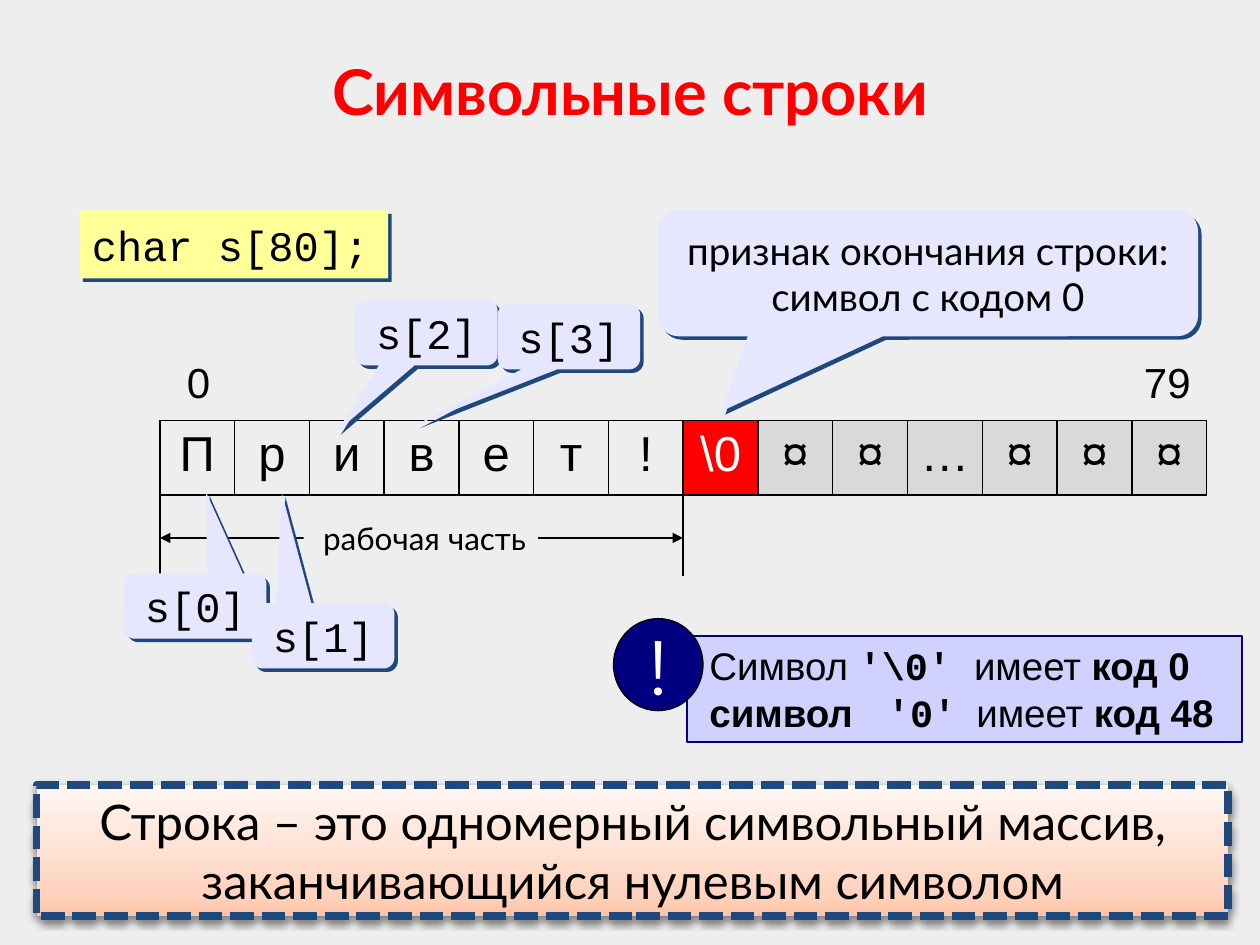
"""Build the slide on character strings in C."""
import copy

import lxml.etree
import pptx
import pptx.dml.color
import pptx.enum.dml
import pptx.enum.shapes
import pptx.enum.text
import pptx.oxml.ns
import pptx.util

Pt = pptx.util.Pt
hex_color = pptx.dml.color.RGBColor.from_string
qn = pptx.oxml.ns.qn
add_xml = lxml.etree.SubElement
SHAPE = pptx.enum.shapes.MSO_SHAPE
ANCHOR = pptx.enum.text.MSO_ANCHOR
ALIGN = pptx.enum.text.PP_ALIGN
STRAIGHT = pptx.enum.shapes.MSO_CONNECTOR.STRAIGHT
NO_STYLE = "{2D5ABB26-0587-4C30-8999-92F81FD0307C}"


def add_box(shapes, preset, place, fill, text, size, font, color="000000"):
    box = shapes.add_shape(preset, *map(Pt, place))
    box.shadow.inherit = False
    box.fill.solid()
    box.fill.fore_color.rgb = hex_color(fill)
    box.line.fill.background()
    box.text_frame.text = text
    para = box.text_frame.paragraphs[0]
    para.alignment = ALIGN.CENTER
    para.font.size = Pt(size)
    para.font.name = font
    para.font.color.rgb = hex_color(color)
    return box


def add_shadow(box, color, opacity, blur, distance, angle):
    effects = box._element.spPr.find(qn("a:effectLst"))
    shadow = add_xml(effects, qn("a:outerShdw"), blurRad=str(Pt(blur)), dist=str(Pt(distance)),
                     dir=str(angle * 60000), algn="ctr", rotWithShape="0")
    tint = add_xml(shadow, qn("a:srgbClr"), val=color)
    add_xml(tint, qn("a:alpha"), val=str(opacity * 1000))


deck = pptx.Presentation()
deck.slide_width, deck.slide_height = Pt(720), Pt(540)
slide = deck.slides.add_slide(deck.slide_layouts[5])
slide.background.fill.solid()
slide.background.fill.fore_color.rgb = hex_color("EEEEEE")

title = slide.shapes.title
title.left, title.top, title.width, title.height = Pt(36), Pt(26.6), Pt(648), Pt(98.6)
title.text_frame.text = "Символьные строки"
title.text_frame.vertical_anchor = ANCHOR.TOP
para = title.text_frame.paragraphs[0]
para.alignment = ALIGN.CENTER
para.font.name = "Lato"
para.font.size = Pt(36)
para.font.bold = True
para.font.color.rgb = hex_color("FF0000")

letters = ["П", "р", "и", "в", "е", "т", "!", "\\0", "¤", "¤", "…", "¤", "¤", "¤"]
tables = [
    (letters, 91.4, 240.4, 598.4, 42.6, 28, True),
    (["0"], 92.9, 202.3, 41, 36, 24, False),
    (["79"], 637.9, 202.3, 58.3, 36, 24, False),
]
for words, left, top, width, height, size, bordered in tables:
    frame = slide.shapes.add_table(1, len(words), Pt(left), Pt(top), Pt(width), Pt(height))
    table = frame.table
    table.first_row = table.horz_banding = False
    table._tbl.tblPr.find(qn("a:tableStyleId")).text = NO_STYLE
    for index, word in enumerate(words):
        cell = table.cell(0, index)
        cell.text = word
        para = cell.text_frame.paragraphs[0]
        para.alignment = ALIGN.CENTER
        para.font.size = Pt(size)
        para.font.name = "Arial"
        para.font.color.rgb = hex_color("FFFFFF" if word == "\\0" else "000000")
        if bordered:
            for side in ("a:lnL", "a:lnR", "a:lnT", "a:lnB"):
                border = add_xml(cell._tc.get_or_add_tcPr(), qn(side), w=str(Pt(1)))
                add_xml(add_xml(border, qn("a:solidFill")), qn("a:srgbClr"), val="000000")
        if index < 7:
            cell.fill.background()
        else:
            cell.fill.solid()
            cell.fill.fore_color.rgb = hex_color("FF0000" if index == 7 else "D9D9D9")

label = slide.shapes.add_textbox(Pt(173.5), Pt(293.3), Pt(138.2), Pt(28.3))
label.text_frame.word_wrap = False
label.text_frame.vertical_anchor = ANCHOR.MIDDLE
label.text_frame.text = "рабочая часть"
para = label.text_frame.paragraphs[0]
para.alignment = ALIGN.CENTER
para.font.size = Pt(18)
para.font.name = "Lato"
para.font.color.rgb = hex_color("000000")

lines = [
    (390.3, 275, 390.3, 329, False),
    (91.4, 274.3, 91.4, 328.3, False),
    (307.4, 307.4, 390.3, 307.4, True),
    (173.5, 307.4, 91.4, 307.4, True),
]
for *ends, arrow in lines:
    connector = slide.shapes.add_connector(STRAIGHT, *map(Pt, ends))
    connector.line.color.rgb = hex_color("000000")
    connector.line.width = Pt(1)
    properties = connector._element.spPr
    add_xml(properties, qn("a:effectLst"))
    if arrow:
        add_xml(properties.find(qn("a:ln")), qn("a:tailEnd"), type="triangle")
connector.begin_connect(label, 1)

callouts = [
    ("s[0]", (70.9, 327.6, 81.4, 37.4), (0.077, -1.733), 24, "Courier New"),
    ("s[1]", (144, 344.6, 81.4, 37.4), (-0.289, -2.173), 24, "Courier New"),
    ("s[2]", (203, 171.4, 81.4, 37.4), (-0.626, 1.507), 24, "Courier New"),
    ("s[3]", (284.4, 173.7, 81.4, 37.4), (-1.067, 1.343), 24, "Courier New"),
    ("признак окончания строки: символ с кодом 0", (375.8, 120.2, 308.9, 72),
     (-0.381, 1.094), 22, "Lato"),
]
for text, place, tip, size, font in callouts:
    callout = add_box(slide.shapes, SHAPE.ROUNDED_RECTANGULAR_CALLOUT, place, "E6E6FF",
                      text, size, font)
    callout.adjustments[0], callout.adjustments[1] = tip
    add_shadow(callout, "1F497D", 100, 0, 2.8, 45)

code = add_box(slide.shapes, SHAPE.RECTANGLE, (45.4, 120.2, 176.4, 38.9), "FFFF99",
               "char s[80];", 24, "Courier New")
code.text_frame.paragraphs[0].alignment = ALIGN.LEFT
add_shadow(code, "1F497D", 100, 0, 2.8, 45)

remark = slide.shapes.add_group_shape()
note = add_box(remark.shapes, SHAPE.RECTANGLE, (392.4, 363.6, 317.5, 60.5), "D1D1FF",
               "", 22, "Arial")
note.line.color.rgb = hex_color("000080")
note.line.width = Pt(1)
note.text_frame.vertical_anchor = ANCHOR.TOP
note.text_frame.margin_left = Pt(13)
note.text_frame.margin_right = 0
note.text_frame.add_paragraph()
note_rows = [
    [("Символ ", "Arial", False), ("'\\0' ", "Courier New", True),
     ("имеет ", "Arial", False), ("код 0", "Arial", True)],
    [("символ\t", "Arial", True), ("'0'\t", "Courier New", True),
     ("имеет ", "Arial", False), ("код 48", "Arial", True)],
]
for para, row in zip(note.text_frame.paragraphs, note_rows):
    para.alignment = ALIGN.LEFT
    stops = lxml.etree.Element(qn("a:tabLst"))
    for stop in (101.5, 152.5):
        add_xml(stops, qn("a:tab"), pos=str(Pt(stop)), algn="l")
    para._p.get_or_add_pPr().insert(0, stops)
    para.font.size = Pt(22)
    para.font.color.rgb = hex_color("000000")
    for text, font, bold in row:
        span = para.add_run()
        span.text = text
        span.font.name = font
        span.font.bold = bold

badge = add_box(remark.shapes, SHAPE.OVAL, (350.6, 353.5, 51.1, 52.6), "000080",
                "!", 44, "Montserrat", "FFFFFF")
badge.line.color.rgb = hex_color("000000")
badge.line.width = Pt(0.75)
badge.text_frame.word_wrap = False

summary = add_box(slide.shapes, SHAPE.RECTANGLE, (20.9, 448.6, 681.1, 74.9), "FFF7F3",
                  "Строка – это одномерный символьный массив, заканчивающийся нулевым символом",
                  28, "Lato")
summary.text_frame.vertical_anchor = ANCHOR.TOP
summary.fill.gradient()
summary.fill.gradient_angle = 90
stop_list = summary._element.spPr.find(qn("a:gradFill")).find(qn("a:gsLst"))
stop_list.insert(1, copy.deepcopy(stop_list[0]))
shades = [(0, "FFC2A3"), (0.15, "FFD2BD"), (1, "FFF7F3")]
for stop, (position, shade) in zip(summary.fill.gradient_stops, shades):
    stop.position = position
    stop.color.rgb = hex_color(shade)
summary.line.color.rgb = hex_color("1F497D")
summary.line.width = Pt(4.5)
summary.line.dash_style = pptx.enum.dml.MSO_LINE.SQUARE_DOT
add_shadow(summary, "000000", 43, 4, 2, 90)

deck.save("out.pptx")
